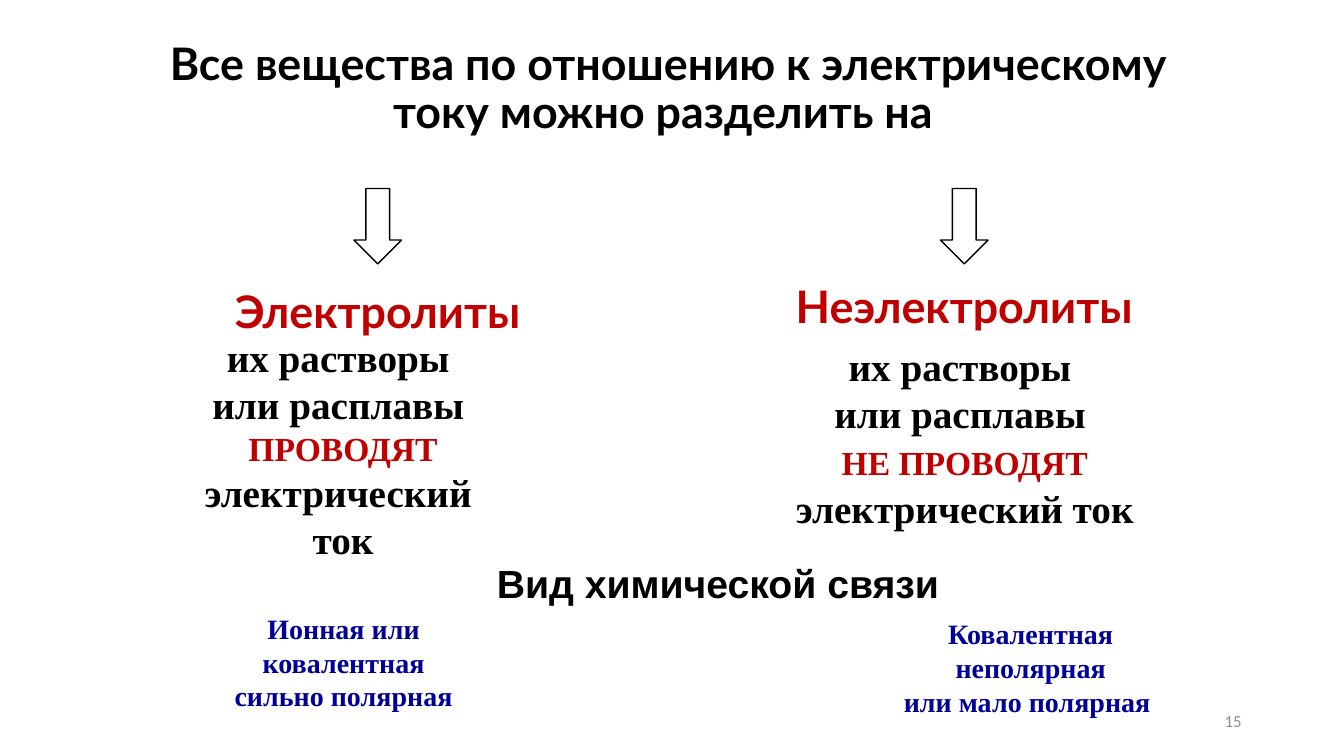
from pptx import Presentation
from pptx.dml.color import RGBColor
from pptx.enum import shapes, text
from pptx.util import Cm, Pt

HUES = {"black": "000000", "white": "FFFFFF", "red": "C00000",
        "blue": "000099", "grey": "8C8C8C"}
SERIF = "Times New Roman"
MID = text.PP_ALIGN.CENTER


def hue(name):
    return RGBColor.from_string(HUES[name])


def add_run(para, words, size, font, color, bold=True):
    run = para.add_run()
    run.text = words
    run.font.size = Pt(size)
    run.font.name = font
    run.font.bold = bold
    run.font.color.rgb = hue(color)


def add_box(slide, left, top, width, height, anchor=text.MSO_ANCHOR.TOP):
    box = slide.shapes.add_textbox(Cm(left), Cm(top), Cm(width), Cm(height))
    frame = box.text_frame
    frame.word_wrap = True
    frame.vertical_anchor = anchor
    return frame


def add_title(slide, words):
    title = slide.shapes.title
    title.left, title.top = Cm(3.4), Cm(1.45)
    title.width, title.height = Cm(26.9), Cm(1.63)
    frame = title.text_frame
    frame.word_wrap = True
    frame.auto_size = text.MSO_AUTO_SIZE.NONE
    frame.vertical_anchor = text.MSO_ANCHOR.MIDDLE
    para = frame.paragraphs[0]
    para.alignment = MID
    para.line_spacing = 0.9
    add_run(para, words, 32, "Lato", "black")


def add_arrow(slide, left):
    arrow = slide.shapes.add_shape(shapes.MSO_SHAPE.DOWN_ARROW, Cm(left),
                                   Cm(4.75), Cm(1.2), Cm(1.9))
    arrow.shadow.inherit = False
    arrow.fill.solid()
    arrow.fill.fore_color.rgb = hue("white")
    arrow.line.color.rgb = hue("black")
    arrow.line.width = Pt(1)


def add_head(slide, words, left, top, height):
    frame = add_box(slide, left, top, 10.2, height, text.MSO_ANCHOR.MIDDLE)
    para = frame.paragraphs[0]
    para.alignment = MID
    para.line_spacing = 1.5
    add_run(para, words, 32, "Lato", "red")


def add_trait(slide, verb, end, spot):
    para = add_box(slide, *spot).paragraphs[0]
    para.alignment = MID
    for line in ("их растворы ", "или расплавы "):
        add_run(para, line, 28, SERIF, "black")
        para.add_line_break()
    add_run(para, verb, 24, SERIF, "red")
    add_run(para, " ", 28 if verb.startswith("НЕ") else 24, SERIF, "red")
    for num, line in enumerate(end):
        if num:
            para.add_line_break()
        add_run(para, line, 28, SERIF, "black")


def add_bond(slide, lines, spot):
    frame = add_box(slide, *spot)
    for num, line in enumerate(lines):
        para = frame.add_paragraph() if num else frame.paragraphs[0]
        para.alignment = MID
        add_run(para, line, 20, SERIF, "blue")


def main():
    deck = Presentation()
    deck.slide_width, deck.slide_height = Cm(33.87), Cm(19.05)
    slide = deck.slides.add_slide(deck.slide_layouts[5])
    add_title(slide, "Все вещества по отношению к электрическому "
                     "току можно разделить на ")

    # Two classes of substances
    for left in (8.92, 23.7):
        add_arrow(slide, left)
    add_head(slide, "Электролиты", 4.42, 6.45, 2.06)
    add_head(slide, "Неэлектролиты", 19.2, 6.2, 2.31)

    # Conductivity
    add_trait(slide, "ПРОВОДЯТ", ("электрический ", "ток"),
              (3.4, 8.28, 10.49, 6.02))
    add_trait(slide, "НЕ ПРОВОДЯТ", ("электрический ток",),
              (19.74, 8.51, 9.15, 5.05))

    # Chemical bond
    bond = add_box(slide, 12.27, 13.97, 11.73, 1.45).paragraphs[0]
    add_run(bond, "Вид химической связи", 28, "Arial", "black")
    add_bond(slide, ("Ионная или ковалентная", "сильно полярная"),
             (4.95, 15.29, 7.42, 2.79))
    add_bond(slide, ("Ковалентная неполярная", "или мало полярная "),
             (21.95, 15.42, 8.05, 2.79))

    # Slide number
    page = add_box(slide, 23.92, 17.66, 7.62, 1.01,
                   text.MSO_ANCHOR.MIDDLE).paragraphs[0]
    page.alignment = text.PP_ALIGN.RIGHT
    add_run(page, "15", 12, "Calibri", "grey", False)

    deck.save("out.pptx")


if __name__ == "__main__":
    main()
